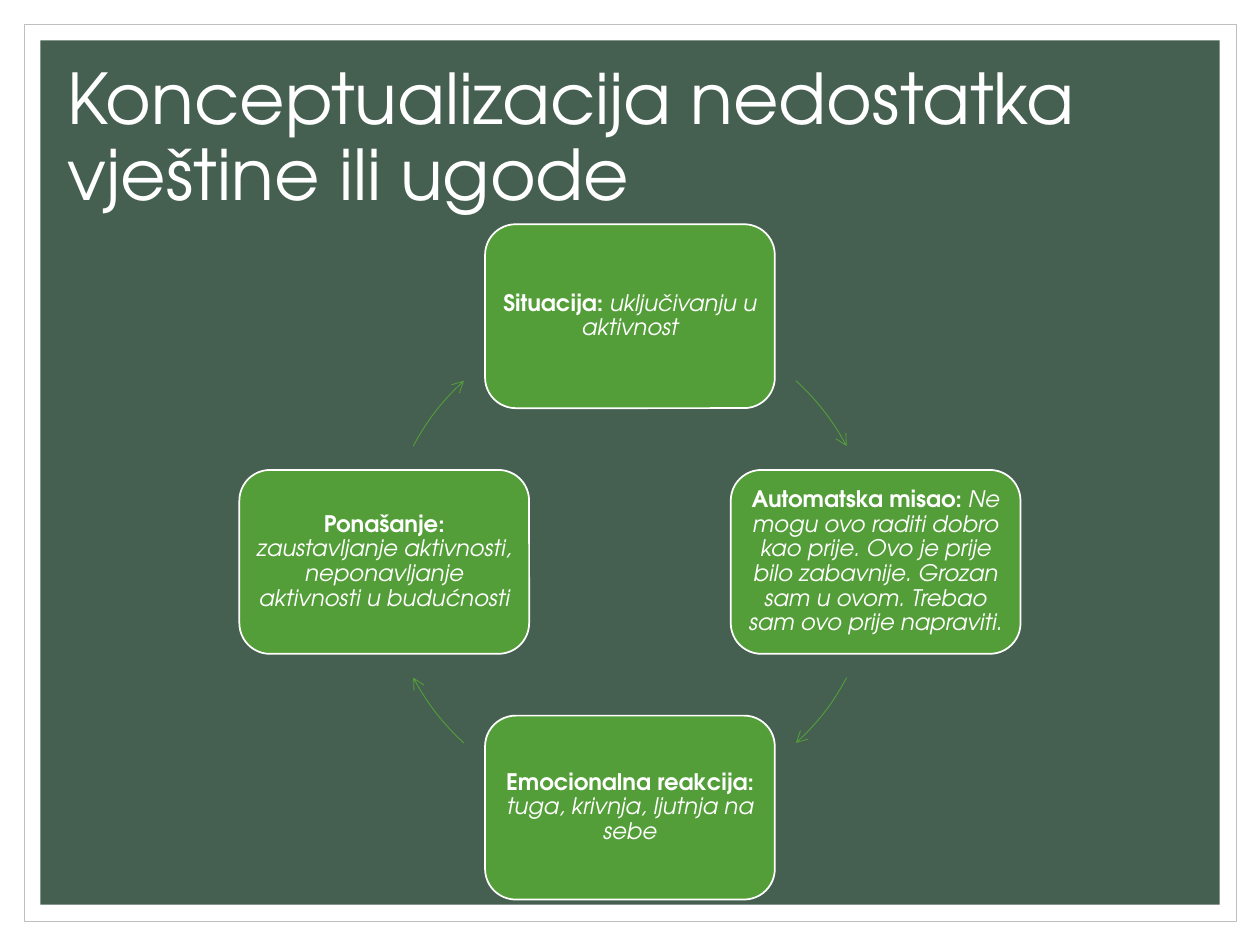
from pptx import Presentation
from pptx.dml.color import RGBColor
from pptx.enum.shapes import MSO_SHAPE
from pptx.enum.text import MSO_ANCHOR, PP_ALIGN
from pptx.oxml.ns import qn
from pptx.util import Inches, Pt
from lxml import etree

RECT, ROUNDED, ARC = MSO_SHAPE.RECTANGLE, MSO_SHAPE.ROUNDED_RECTANGLE, MSO_SHAPE.ARC
MIDDLE, CENTER = MSO_ANCHOR.MIDDLE, PP_ALIGN.CENTER
FONT = "TeX Gyre Adventor"
COLORS = {"white": "FFFFFF", "frame": "BFBFBF", "panel": "455F51", "green": "549E39"}

prs = Presentation()
prs.slide_width, prs.slide_height = Inches(10), Inches(7.5)
s = prs.slides.add_slide(prs.slide_layouts[6])


def add_shape(kind, x, y, w, h, fill=None, line=None, width=0.5):
    sp = s.shapes.add_shape(kind, Inches(x), Inches(y), Inches(w), Inches(h))
    sp.shadow.inherit = False
    if fill:
        sp.fill.solid()
        sp.fill.fore_color.rgb = RGBColor.from_string(COLORS[fill])
    else:
        sp.fill.background()
    if line:
        sp.line.color.rgb = RGBColor.from_string(COLORS[line])
        sp.line.width = Pt(width)
    else:
        sp.line.fill.background()
    return sp


def add_run(p, text, size, bold=False, italic=False):
    r = p.add_run()
    r.text = text
    r.font.name, r.font.size = FONT, Pt(size)
    r.font.bold, r.font.italic = bold, italic
    r.font.color.rgb = RGBColor.from_string(COLORS["white"])


# Background frame and panel
add_shape(RECT, 0.19, 0.19, 9.62, 7.12, "white", "frame")
add_shape(RECT, 0.32, 0.32, 9.36, 6.86, "panel")

# Title
tf = s.shapes.add_textbox(Inches(0.44), Inches(0.39), Inches(9.13), Inches(1.44)).text_frame
tf.word_wrap = True
tf.vertical_anchor = MIDDLE
p = tf.paragraphs[0]
p.line_spacing = 0.9
add_run(p, "Konceptualizacija nedostatka vještine ili ugode", 40)

# Cycle: four boxes clockwise from the top, each followed by an arc arrow
CX, CY, RADIUS = 5, 4.46, 1.95
BOX_W, BOX_H = 2.3, 1.46
STEPS = [
    (0, -1, "Situacija: ", "uključivanju u aktivnost", 312.5, 331.9),
    (1, 0, "Automatska misao: ", "Ne mogu ovo raditi dobro kao prije. Ovo je prije bilo "
     "zabavnije. Grozan sam u ovom. Trebao sam ovo prije napraviti.", 28.1, 47.5),
    (0, 1, "Emocionalna reakcija: ", "tuga, krivnja, ljutnja na sebe", 132.5, 151.9),
    (-1, 0, "Ponašanje: ", "zaustavljanje aktivnosti, neponavljanje aktivnosti u budućnosti",
     208.1, 227.5),
]
for dx, dy, label, text, start, end in STEPS:
    box = add_shape(ROUNDED, CX + dx * RADIUS - BOX_W / 2, CY + dy * RADIUS - BOX_H / 2,
                    BOX_W, BOX_H, "green", "white", 1)
    tf = box.text_frame
    tf.word_wrap = True
    tf.vertical_anchor = MIDDLE
    tf.margin_left = tf.margin_right = tf.margin_top = tf.margin_bottom = Inches(0.05)
    p = tf.paragraphs[0]
    p.alignment, p.line_spacing = CENTER, 0.9
    add_run(p, label, 13, bold=True)
    add_run(p, text, 13, italic=True)

    arc = add_shape(ARC, CX - RADIUS, CY - RADIUS, 2 * RADIUS, 2 * RADIUS, line="green")
    # Arc angles are stored in 1/60000 degree, adjustments in 1/100000
    arc.adjustments[0], arc.adjustments[1] = start * 0.6, end * 0.6
    etree.SubElement(arc.line._get_or_add_ln(), qn("a:tailEnd"), type="arrow")

prs.save("out.pptx")
